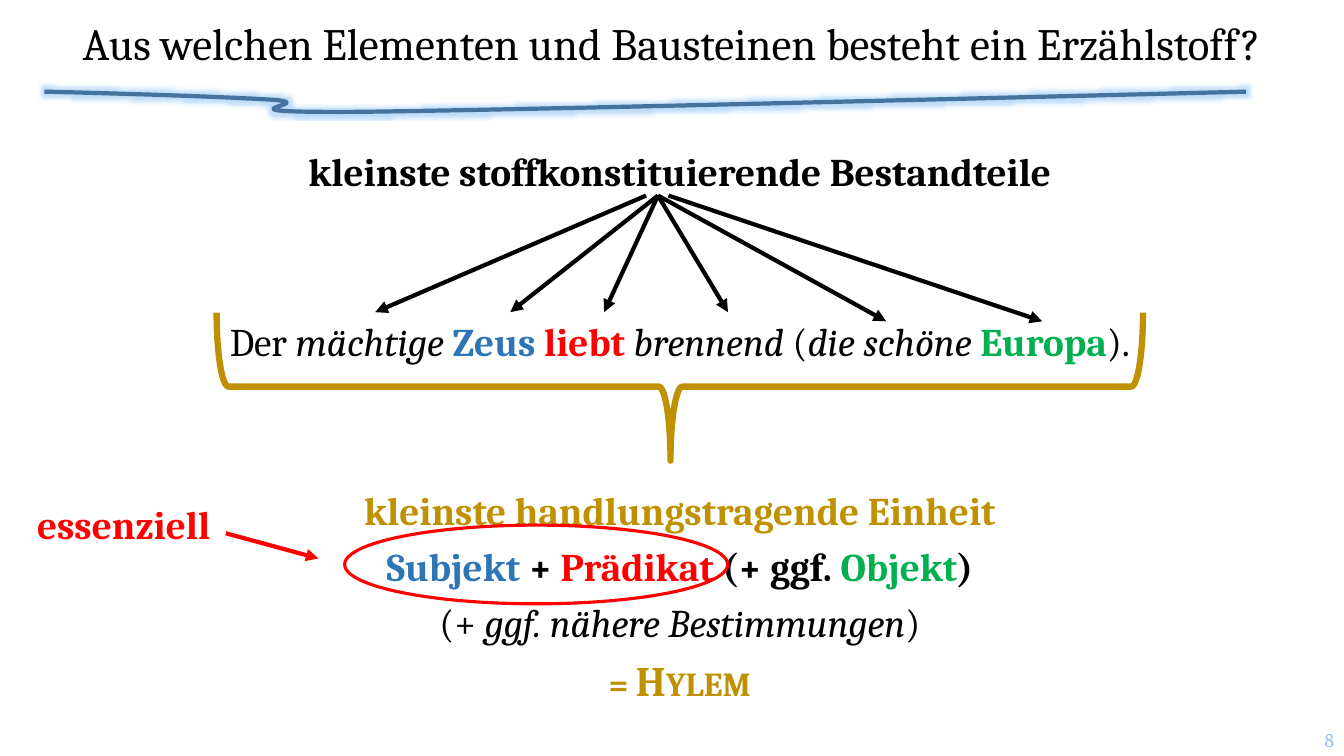
from dataclasses import dataclass

import pptx
import pptx.dml.color
import pptx.enum.shapes
import pptx.enum.text
import pptx.oxml
import pptx.oxml.ns
import pptx.util

Pt = pptx.util.Pt
ALIGN = pptx.enum.text.PP_ALIGN
ANCHOR = pptx.enum.text.MSO_ANCHOR
SHAPE = pptx.enum.shapes.MSO_SHAPE


@dataclass(frozen=True)
class Theme:
    font: str = "Cambria"
    black: str = "000000"
    blue: str = "2E75B6"
    red: str = "FF0000"
    green: str = "00B050"
    gold: str = "BF9000"
    swoosh: str = "43739E"
    glow: str = "5AA9F5"
    number: str = "9DC3E6"
    title_size: int = 32
    body_size: int = 28
    hylem_size: int = 30
    number_size: int = 14


T = Theme()
SECTION_GAP = 90.5
LINE_GAP = 10

BODY = [
    (LINE_GAP, [("kleinste stoffkonstituierende Bestandteile", T.black, "b")]),
    (SECTION_GAP, [
        ("Der ", T.black, ""), ("mächtige ", T.black, "i"),
        ("Zeus ", T.blue, "b"), ("liebt ", T.red, "b"),
        ("brennend ", T.black, "i"), ("(", T.black, ""),
        ("die schöne ", T.black, "i"), ("Europa", T.green, "b"),
        (").", T.black, "")]),
    (SECTION_GAP, [("kleinste handlungstragende Einheit", T.gold, "b")]),
    (LINE_GAP, [
        ("Subjekt", T.blue, "b"), (" + ", T.black, "b"),
        ("Prädikat", T.red, "b"), (" (+ ggf. ", T.black, "b"),
        ("Objekt", T.green, "b"), (")", T.black, "b")]),
    (LINE_GAP, [
        ("(+ ", T.black, ""), ("ggf. nähere Bestimmungen", T.black, "i"),
        (")", T.black, "")]),
    (LINE_GAP, [("= Hylem", T.gold, "bs")]),
]

WORD_ARROWS = [
    (461.5, 268, 223),
    (470, 364.5, 223),
    (470, 431.5, 223),
    (470, 520, 223),
    (470, 633, 229.5),
    (477.5, 744.5, 229.5),
]

SWOOSH_START = (31.7, 65.5)
SWOOSH_CURVES = [
    ((94.3, 67), (157.7, 69.1), (195.1, 71.3)),
    ((232.6, 74.2), (140.4, 80.6), (256.3, 79.9)),
    ((372.2, 78.5), (630.7, 72), (889.9, 65.5)),
]


def rgb(color):
    return pptx.dml.color.RGBColor.from_string(color)


def xml(tag, inner="", **attrs):
    pairs = "".join(f' {k}="{v}"' for k, v in attrs.items())
    return pptx.oxml.parse_xml(
        f'<a:{tag} {pptx.oxml.ns.nsdecls("a")}{pairs}>{inner}</a:{tag}>')


def style_run(r, size, color, style=""):
    r.font.name = T.font
    r.font.size = Pt(size)
    r.font.color.rgb = rgb(color)
    r.font.bold = "b" in style
    r.font.italic = "i" in style
    if "s" in style:
        r.font._element.set("cap", "small")


def style_line(sp, color, width):
    sp.line.color.rgb = rgb(color)
    sp.line.width = Pt(width)


def add_title(s, text):
    sp = s.shapes.title
    sp.left, sp.top, sp.width, sp.height = Pt(0), Pt(0), Pt(960), Pt(65.5)
    tf = sp.text_frame
    tf.text = text
    tf.vertical_anchor = ANCHOR.MIDDLE
    p = tf.paragraphs[0]
    p.alignment = ALIGN.CENTER
    p.line_spacing = 0.9
    style_run(p.runs[0], T.title_size, T.black)


def add_text_box(s, left, top, width, height):
    sp = s.shapes.add_textbox(Pt(left), Pt(top), Pt(width), Pt(height))
    sp.text_frame.word_wrap = True
    return sp.text_frame


def add_label(s, box, text, size, color, style="", align=ALIGN.LEFT,
              anchor=ANCHOR.TOP):
    tf = add_text_box(s, *box)
    tf.text = text
    tf.vertical_anchor = anchor
    p = tf.paragraphs[0]
    p.alignment = align
    style_run(p.runs[0], size, color, style)


def add_body(s):
    tf = add_text_box(s, 26.6, 105.8, 918, 404.6)
    for i, (gap, parts) in enumerate(BODY):
        p = tf.add_paragraph() if i else tf.paragraphs[0]
        p.alignment = ALIGN.CENTER
        p.line_spacing = 0.9
        p.space_before = Pt(gap)
        for text, color, style in parts:
            r = p.add_run()
            r.text = text
            size = T.hylem_size if "s" in style else T.body_size
            style_run(r, size, color, style)


def add_arrow(s, x1, y1, x2, y2, color):
    sp = s.shapes.add_connector(
        pptx.enum.shapes.MSO_CONNECTOR.STRAIGHT,
        Pt(x1), Pt(y1), Pt(x2), Pt(y2))
    style_line(sp, color, 3)
    sp.line._get_or_add_ln().append(xml("tailEnd", type="triangle"))
    sp._element.spPr.append(xml("effectLst"))


def add_outline(s, kind, box, color, width):
    sp = s.shapes.add_shape(kind, *[Pt(v) for v in box])
    sp.shadow.inherit = False
    sp.fill.background()
    style_line(sp, color, width)
    return sp


def curve_points(start, curves, steps=24):
    points = []
    for c1, c2, end in curves:
        for i in range(1, steps + 1):
            t = i / steps
            u = 1 - t
            points.append(tuple(
                Pt(u**3 * a + 3 * u * u * t * b + 3 * u * t * t * c + t**3 * d)
                for a, b, c, d in zip(start, c1, c2, end)))
        start = end
    return points


def add_swoosh(s):
    x, y = SWOOSH_START
    fb = s.shapes.build_freeform(Pt(x), Pt(y))
    fb.add_line_segments(curve_points(SWOOSH_START, SWOOSH_CURVES), close=False)
    sp = fb.convert_to_shape()
    sp.fill.background()
    style_line(sp, T.swoosh, 3)
    color = f'<a:srgbClr val="{T.glow}"><a:alpha val="40000"/></a:srgbClr>'
    glow = f'<a:glow rad="{Pt(5)}">{color}</a:glow>'
    sp._element.spPr.append(xml("effectLst", glow))


def main():
    prs = pptx.Presentation()
    prs.slide_width, prs.slide_height = Pt(960), Pt(540)
    s = prs.slides.add_slide(prs.slide_layouts[5])
    add_swoosh(s)
    add_title(s, "Aus welchen Elementen und Bausteinen besteht ein Erzählstoff?")
    add_body(s)
    add_label(s, (907.9, 517.7, 52.1, 20.9), "8", T.number_size, T.number,
              align=ALIGN.RIGHT, anchor=ANCHOR.MIDDLE)
    for x1, x2, y2 in WORD_ARROWS:
        add_arrow(s, x1, 139.7, x2, y2, T.black)
    brace = add_outline(s, SHAPE.LEFT_BRACE, (432.7, -54.7, 105.8, 661.7),
                        T.gold, 4.5)
    brace.rotation = 270
    brace.adjustments[0] = 0.08
    brace.adjustments[1] = 0.49
    add_label(s, (19.4, 354.2, 174.2, 41), "essenziell", T.body_size, T.red, "b")
    add_arrow(s, 161.3, 380.9, 227.5, 398.9, T.red)
    add_outline(s, SHAPE.OVAL, (246.2, 375.1, 273.6, 56.2), T.red, 2.25)
    prs.save("out.pptx")


if __name__ == "__main__":
    main()
